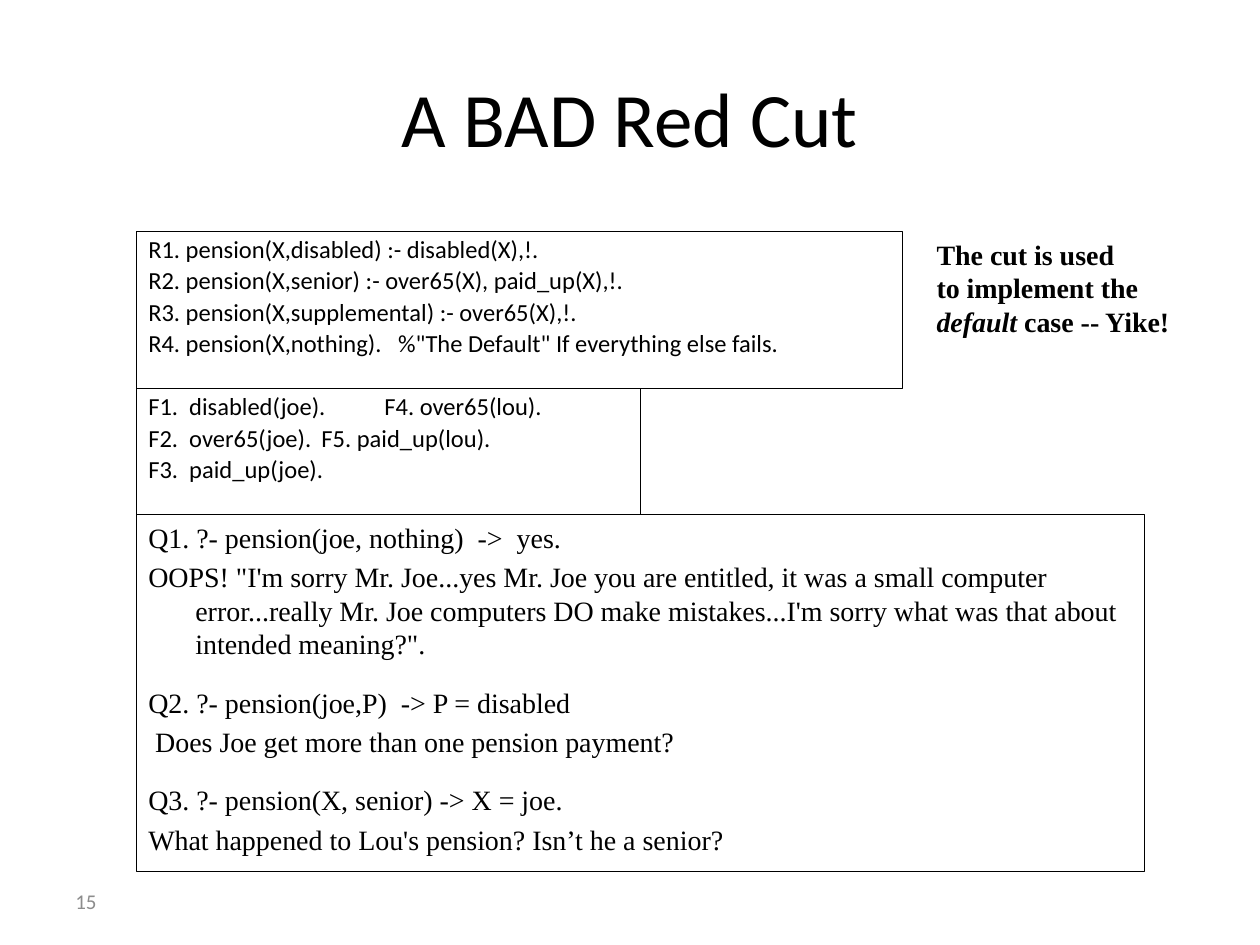
import pptx
import pptx.util
import pptx.dml.color
import pptx.enum.text
import pptx.enum.shapes

Cm = pptx.util.Cm
Pt = pptx.util.Pt
ALIGN = pptx.enum.text.PP_ALIGN
ANCHOR = pptx.enum.text.MSO_ANCHOR
SANS, SERIF = "Calibri", "Times New Roman"
LEFT = 2.74  # shared left edge of the stacked boxes

RULES = [
    "R1. pension(X,disabled) :- disabled(X),!.",
    "R2. pension(X,senior) :- over65(X), paid_up(X),!.",
    "R3. pension(X,supplemental) :- over65(X),!.",
    'R4. pension(X,nothing).   %"The Default" If everything else fails.',
]
FACTS = [
    "F1.  disabled(joe).\tF4. over65(lou).",
    "F2.  over65(joe).\tF5. paid_up(lou).",
    "F3.  paid_up(joe).",
]
QUERIES = [
    "Q1. ?- pension(joe, nothing)  ->  yes.",
    "OOPS! \"I'm sorry Mr. Joe...yes Mr. Joe you are entitled, it was a small "
    "computer error...really Mr. Joe computers DO make mistakes...I'm sorry "
    'what was that about intended meaning?".',
    "Q2. ?- pension(joe,P)  -> P = disabled",
    " Does Joe get more than one pension payment?",
    "Q3. ?- pension(X, senior) -> X = joe.",
    "What happened to Lou's pension? Isn’t he a senior?",
]
NOTE = ["The cut is used", "to implement the", ""]


def color(code):
    return pptx.dml.color.RGBColor.from_string(code)


def write(shape, lines, size, face, tint="000000", align=ALIGN.LEFT,
          anchor=ANCHOR.TOP):
    """Fill a shape with one paragraph per line."""
    frame = shape.text_frame
    frame.word_wrap = True
    frame.vertical_anchor = anchor
    frame.text = "\n".join(lines)
    for para in frame.paragraphs:
        para.alignment = align
        para.font.size = Pt(size)
        para.font.name = face
        para.font.color.rgb = color(tint)
    return frame.paragraphs


def hang(paras, before=0, pitch=1.0):
    """Give paragraphs a hanging indent and half-inch tabs."""
    for para in paras:
        para.space_before = Pt(before)
        para.line_spacing = pitch
        props = para._p.get_or_add_pPr()
        props.set("marL", str(Cm(0.95)))
        props.set("indent", str(Cm(-0.95)))
        props.set("defTabSz", str(Cm(1.27)))


def label(slide, left, top, width, height, lines, size, face, **style):
    box = slide.shapes.add_textbox(Cm(left), Cm(top), Cm(width), Cm(height))
    return write(box, lines, size, face, **style)


def panel(slide, top, width, height, lines, size, face):
    """Add an outlined box of the stack."""
    box = slide.shapes.add_shape(
        pptx.enum.shapes.MSO_SHAPE.RECTANGLE,
        Cm(LEFT), Cm(top), Cm(width), Cm(height))
    box.shadow.inherit = False
    box.fill.background()
    box.line.color.rgb = color("000000")
    box.line.width = Pt(0.25)
    return write(box, lines, size, face)


def main():
    deck = pptx.Presentation()
    deck.slide_width, deck.slide_height = Cm(25.4), Cm(19.05)
    slide = deck.slides.add_slide(deck.slide_layouts[6])

    # Title and page number
    label(slide, 1.27, 0.76, 22.86, 3.18, ["A BAD Red Cut"], 44, SANS,
          align=ALIGN.CENTER, anchor=ANCHOR.MIDDLE)
    label(slide, 1.27, 17.65, 5.92, 1.02, ["15"], 12, SANS,
          tint="8C8C8C", anchor=ANCHOR.MIDDLE)

    # Rules and facts
    hang(panel(slide, 4.66, 15.45, 3.17, RULES, 14, SANS), 2.8, 0.9)
    hang(panel(slide, 7.83, 10.16, 2.54, FACTS, 14, SANS), 2.8, 0.9)

    # Queries, with a wider gap above Q2 and Q3
    paras = panel(slide, 10.37, 20.32, 7.2, QUERIES, 16, SERIF)
    hang(paras, 3.2)
    for para in paras[2::2]:
        para.space_before = Pt(14.2)

    # Side note
    paras = label(slide, 18.63, 4.66, 5.72, 5.92, NOTE, 16, SERIF)
    hang(paras)
    for para in paras:
        para.font.bold = True
    word = paras[-1].add_run()
    word.text = "default"
    word.font.italic = True
    paras[-1].add_run().text = " case -- Yike!"

    deck.save("out.pptx")


if __name__ == "__main__":
    main()
